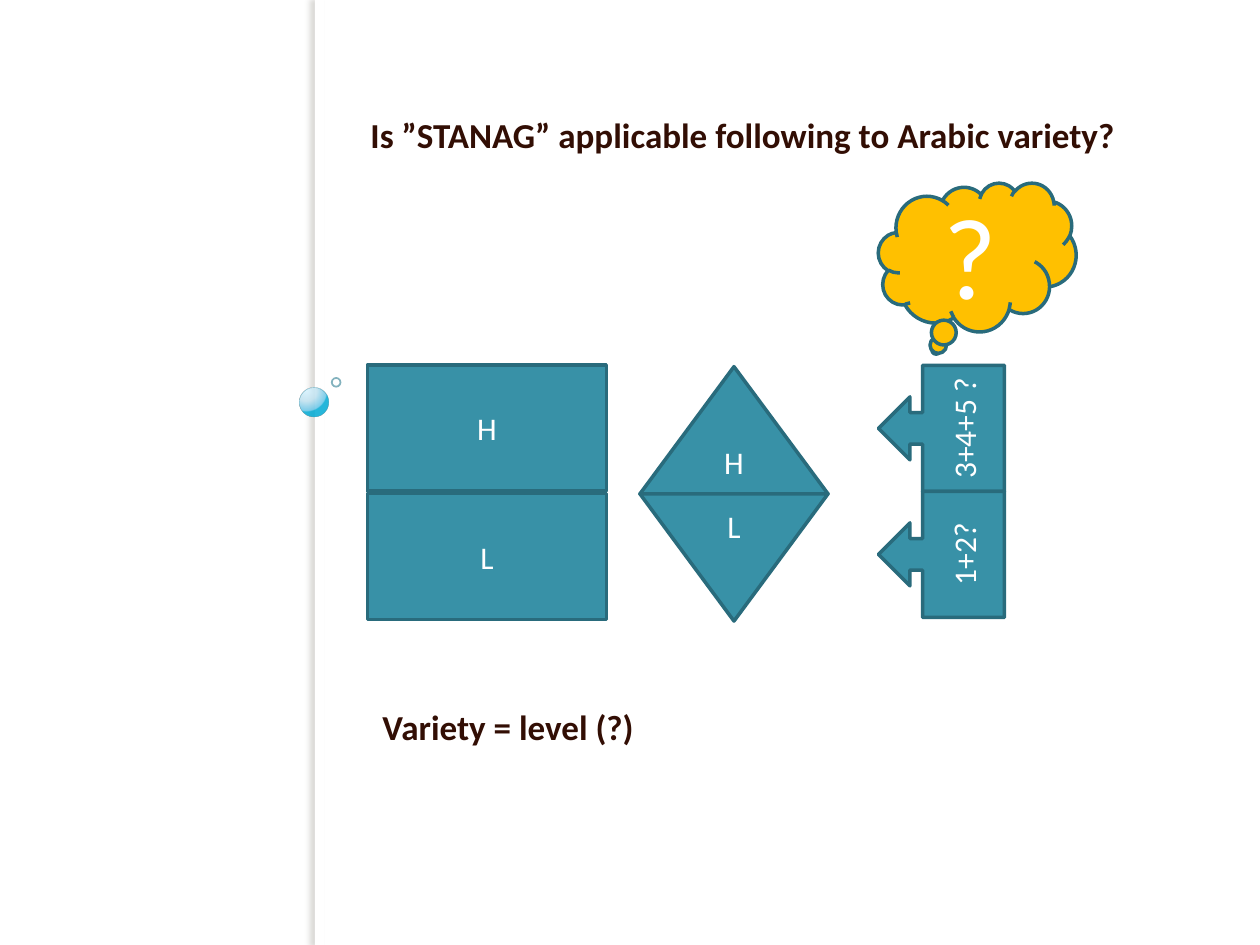
from lxml import etree
from pptx import Presentation
from pptx.dml.color import RGBColor
from pptx.enum.shapes import MSO_SHAPE
from pptx.enum.text import MSO_ANCHOR, MSO_AUTO_SIZE, PP_ALIGN
from pptx.oxml import parse_xml
from pptx.oxml.ns import nsdecls, qn
from pptx.util import Pt

RECTANGLE = MSO_SHAPE.RECTANGLE
OVAL = MSO_SHAPE.OVAL
EXTRACT = MSO_SHAPE.FLOWCHART_EXTRACT
MERGE = MSO_SHAPE.FLOWCHART_MERGE
ARROW_CALLOUT = MSO_SHAPE.LEFT_ARROW_CALLOUT
CLOUD = MSO_SHAPE.CLOUD_CALLOUT
MIDDLE, BOTTOM = MSO_ANCHOR.MIDDLE, MSO_ANCHOR.BOTTOM
LEFT, CENTER = PP_ALIGN.LEFT, PP_ALIGN.CENTER
NO_AUTOFIT = MSO_AUTO_SIZE.NONE

WHITE = RGBColor(0xFF, 0xFF, 0xFF)
TEAL = RGBColor(0x38, 0x91, 0xA7)
DARK_TEAL = RGBColor(0x29, 0x6B, 0x7C)
AMBER = RGBColor(0xFF, 0xC0, 0x00)
BROWN = RGBColor(0x32, 0x0E, 0x04)
SHADOW_GREY = RGBColor(0x73, 0x6F, 0x63)
BEAD_LINE = RGBColor(0x30, 0x8E, 0xA5)
RING_LINE = RGBColor(0x31, 0x80, 0x93)
BEAD_STOPS = [
    (0, RGBColor(0xDA, 0xF4, 0xFF), 95),
    (50, RGBColor(0xC3, 0xE3, 0xF0), 90),
    (95, RGBColor(0x6B, 0xC7, 0xE8), 88),
    (100, RGBColor(0x00, 0xAB, 0xD5), 85),
]


def write_text(shape, text, size=18, color=WHITE, bold=False, align=CENTER,
               anchor=MIDDLE, spacing=None, indent=0, vertical=None):
    """Write one formatted paragraph into a shape."""
    frame = shape.text_frame
    frame.word_wrap = True
    frame.auto_size = NO_AUTOFIT
    frame.vertical_anchor = anchor
    properties = frame._txBody.bodyPr
    if vertical:
        properties.set("vert", vertical)
    para = frame.paragraphs[0]
    para.alignment = align
    if spacing:
        para.line_spacing = Pt(spacing)
    if indent:
        para._p.get_or_add_pPr().set("marL", str(Pt(indent)))
    span = para.add_run()
    span.text = text
    span.font.name = "Calibri"
    span.font.size = Pt(size)
    span.font.bold = bold
    span.font.color.rgb = color


def add_box(shapes, kind, place, fill=TEAL, line=DARK_TEAL, width=2):
    """Add a preset shape with flat fill and line, either of which may be None."""
    box = shapes.add_shape(kind, *map(Pt, place))
    box.shadow.inherit = False
    if fill is None:
        box.fill.background()
    else:
        box.fill.solid()
        box.fill.fore_color.rgb = fill
    if line is None:
        box.line.fill.background()
    else:
        box.line.color.rgb = line
        box.line.width = Pt(width)
    return box


def add_stack(slide, kinds, place, step):
    """Add a group of two shapes, H above L."""
    left, top, width, height = place
    group = slide.shapes.add_group_shape()
    for row, (kind, label) in enumerate(zip(kinds, "HL")):
        box = add_box(group.shapes, kind, (left, top + row * step, width, height))
        write_text(box, label)


def fade_line(shape, percent):
    """Make the line of a shape partly transparent."""
    color = shape.line._ln.find(".//" + qn("a:srgbClr"))
    etree.SubElement(color, qn("a:alpha"), val=str(percent * 1000))


def cast_shadow(shape, color, percent, blur, distance):
    """Give a shape a soft shadow to its left."""
    effects = shape._element.spPr.find(qn("a:effectLst"))
    effects.append(parse_xml(
        f'<a:outerShdw {nsdecls("a")} blurRad="{Pt(blur)}" dist="{Pt(distance)}" '
        f'dir="10800000" algn="tl" rotWithShape="0"><a:srgbClr val="{color}">'
        f'<a:alpha val="{percent * 1000}"/></a:srgbClr></a:outerShdw>'))


def fill_bead(shape, stops):
    """Replace a flat fill by a round gradient lit from the upper left."""
    marks = "".join(
        f'<a:gs pos="{position * 1000}"><a:srgbClr val="{color}">'
        f'<a:alpha val="{percent * 1000}"/></a:srgbClr></a:gs>'
        for position, color, percent in stops)
    gradient = parse_xml(
        f'<a:gradFill {nsdecls("a")} rotWithShape="1"><a:gsLst>{marks}</a:gsLst>'
        '<a:path path="circle"><a:fillToRect l="25000" t="12000" r="75000" '
        'b="88000"/></a:path></a:gradFill>')
    properties = shape._element.spPr
    properties.replace(properties.find(qn("a:solidFill")), gradient)


def add_margin(slide):
    """Draw the shaded edge with its bead and ring."""
    edge = add_box(slide.shapes, RECTANGLE, (180, 0, 5.5, 540), WHITE, None)
    cast_shadow(edge, SHADOW_GREY, 25, 3, 3)
    bead = add_box(slide.shapes, OVAL, (171, 221.5, 16.8, 16.8), TEAL, BEAD_LINE, 0.16)
    fill_bead(bead, BEAD_STOPS)
    ring = add_box(slide.shapes, OVAL, (189.6, 216, 5, 5), None, RING_LINE, 1)
    for circle in (bead, ring):
        fade_line(circle, 60)


def place_heading(shape, left, top, text):
    """Move a text shape and write a bold heading in it."""
    shape.left, shape.top = Pt(left), Pt(top)
    shape.width, shape.height = Pt(504), Pt(49.5)
    write_text(shape, text, size=20, color=BROWN, bold=True, align=LEFT,
               anchor=BOTTOM, spacing=23, indent=1.5)


def main():
    """Build the slide and save it."""
    deck = Presentation()
    deck.slide_width, deck.slide_height = Pt(720), Pt(540)
    page = deck.slides.add_slide(deck.slide_layouts[5])

    add_margin(page)
    add_stack(page, (RECTANGLE, RECTANGLE), (210, 208.5, 136.5, 72), 73.5)
    add_stack(page, (EXTRACT, MERGE), (365.7, 209.5, 107.5, 72.7), 72.7)

    for row, label in enumerate(("3+4+5 ?", "1+2?")):
        callout = add_box(page.shapes, ARROW_CALLOUT, (502, 208.8 + row * 72, 72, 72))
        write_text(callout, label, vertical="vert270")

    cloud = add_box(page.shapes, CLOUD, (502, 104.4, 113, 85), AMBER)
    write_text(cloud, "?", size=66)

    place_heading(page.shapes.title, 203, 43.2,
                  "Is ”STANAG” applicable following to Arabic variety?")
    conclusion = page.shapes.add_textbox(0, 0, 0, 0)
    place_heading(conclusion, 210, 381, "Variety = level (?)")

    deck.save("out.pptx")


if __name__ == "__main__":
    main()
